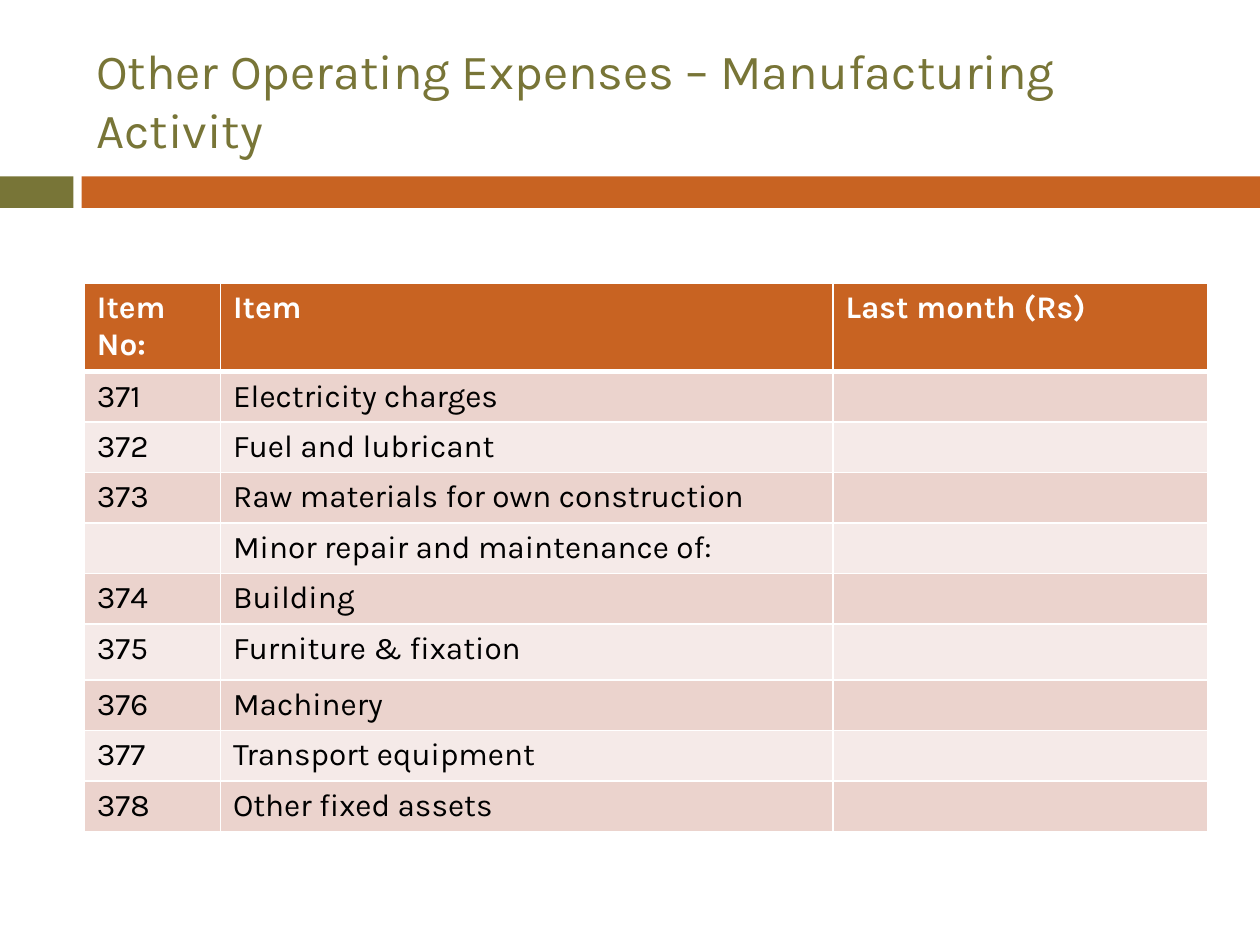
from dataclasses import dataclass
from lxml.etree import SubElement as Sub
from pptx import Presentation
from pptx.dml.color import RGBColor as Rgb
from pptx.enum.shapes import MSO_SHAPE as Kind
from pptx.enum.text import MSO_ANCHOR as Anchor
from pptx.oxml.ns import qn
from pptx.util import Pt


@dataclass(frozen=True)
class Theme:
    font: str = "Karla"
    olive: str = "787537"
    rust: str = "C86322"
    dark: str = "EBD3CD"
    light: str = "F5EAE8"
    white: str = "FFFFFF"
    black: str = "000000"
    head: int = 28
    body: int = 18


LOOK = Theme()
TITLE = "Other Operating Expenses – Manufacturing Activity"
HEADS = ("Item No:", "Item", "Last month (Rs)")
ITEMS = (
    ("371", "Electricity charges"),
    ("372", "Fuel and lubricant"),
    ("373", "Raw materials for own construction"),
    ("", "Minor repair and maintenance of:"),
    ("374", "Building"),
    ("375", "Furniture & fixation"),
    ("376", "Machinery"),
    ("377", "Transport equipment"),
    ("378", "Other fixed assets"),
)
WIDTHS = (77.8, 350, 214.2)
HEIGHTS = (49.2, *[28.3] * 5, 32, *[28.3] * 3)


def style(frame, text, size, color, bold=False):
    para = frame.paragraphs[0]
    para.text = text
    font = para.font
    font.name, font.size, font.bold = LOOK.font, Pt(size), bold
    font.color.rgb = Rgb.from_string(color)


def add_title(slide, left, top, width, height):
    box = slide.shapes.add_textbox(Pt(left), Pt(top), Pt(width), Pt(height))
    frame = box.text_frame
    frame.word_wrap = True
    frame.vertical_anchor = Anchor.MIDDLE
    style(frame, TITLE, LOOK.head, LOOK.olive)


def add_band(slide, left, top, width, height):
    tab, gap = 42, 4.6
    start = tab + gap
    for shift, span, color in ((0, tab, LOOK.olive), (start, width - start, LOOK.rust)):
        bar = slide.shapes.add_shape(
            Kind.RECTANGLE, Pt(left + shift), Pt(top), Pt(span), Pt(height))
        bar.shadow.inherit = False
        bar.fill.solid()
        bar.fill.fore_color.rgb = Rgb.from_string(color)
        bar.line.fill.background()


def add_rules(cell, weights):
    props = cell._tc.get_or_add_tcPr()
    for side, weight in zip("LRTB", weights):
        line = Sub(props, qn(f"a:ln{side}"), w=str(Pt(weight)))
        Sub(Sub(line, qn("a:solidFill")), qn("a:srgbClr"), val=LOOK.white)


def add_grid(slide, left, top, width, height):
    rows = [HEADS] + [(*item, "") for item in ITEMS]
    grid = slide.shapes.add_table(
        len(rows), len(HEADS), Pt(left), Pt(top), Pt(width), Pt(height)).table
    for col, span in zip(grid.columns, WIDTHS):
        col.width = Pt(span)
    for row, span in zip(grid.rows, HEIGHTS):
        row.height = Pt(span)
    for r, row in enumerate(rows):
        first = r == 0
        band = LOOK.rust if first else LOOK.dark if r % 2 else LOOK.light
        ink = LOOK.white if first else LOOK.black
        for c, text in enumerate(row):
            cell = grid.cell(r, c)
            add_rules(cell, (1, 1, 3 if r == 1 else 1, 3 if first else 1))
            cell.fill.solid()
            cell.fill.fore_color.rgb = Rgb.from_string(band)
            style(cell.text_frame, text, LOOK.body, ink, first)


def main():
    deck = Presentation()
    deck.slide_width, deck.slide_height = Pt(720), Pt(540)
    slide = deck.slides.add_slide(deck.slide_layouts[6])
    add_band(slide, 0, 100.8, 720, 18)
    add_title(slide, 48, 18, 642, 78)
    add_grid(slide, 48.2, 162, sum(WIDTHS), sum(HEIGHTS))
    deck.save("out.pptx")


if __name__ == "__main__":
    main()
